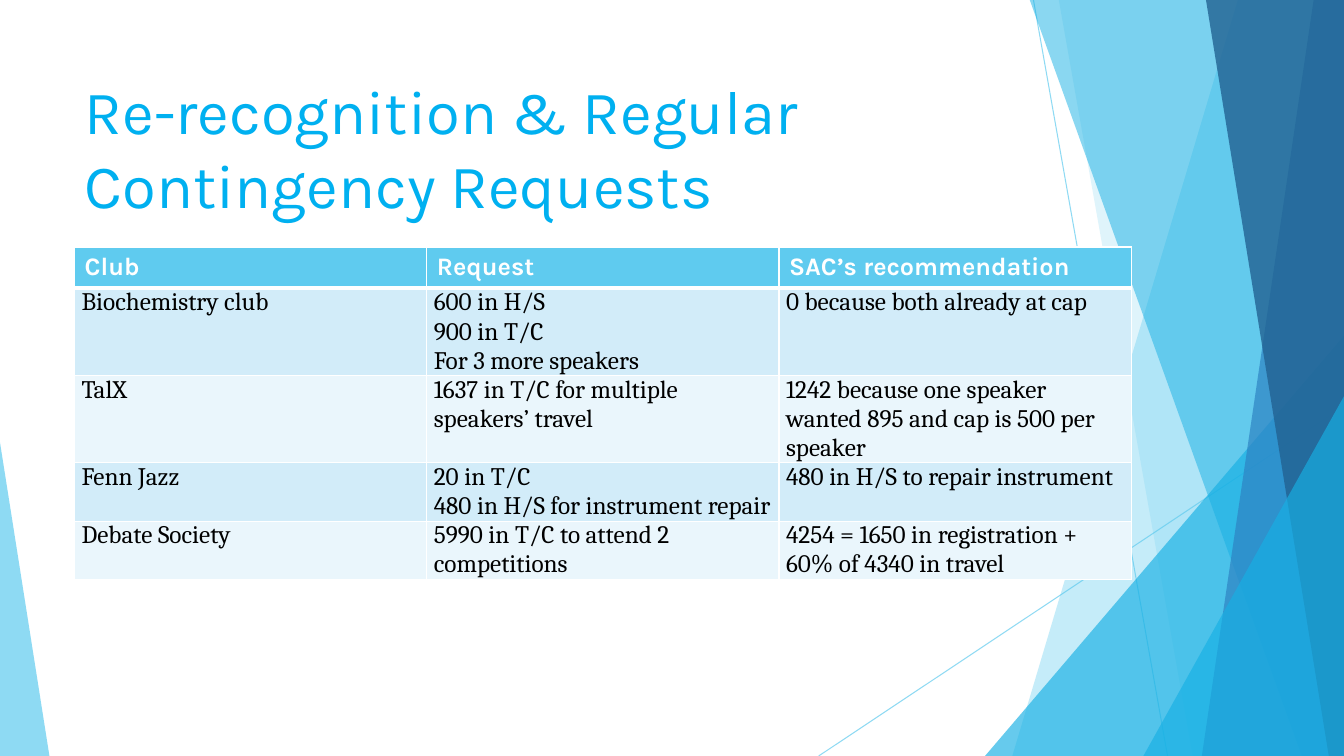
from lxml.etree import SubElement
from pptx import Presentation
from pptx.dml.color import RGBColor
from pptx.enum.shapes import MSO_CONNECTOR, MSO_SHAPE
from pptx.enum.text import MSO_ANCHOR, MSO_AUTO_SIZE, PP_ALIGN
from pptx.oxml.ns import qn
from pptx.oxml.xmlchemy import OxmlElement
from pptx.util import Inches, Pt

WIDTH, HEIGHT = 13.33, 7.5
COLORS = {
    "sky": "5FCBEF", "cyan": "17B0E4", "blue": "2E83C3", "navy": "226292",
    "title": "00B0F0", "white": "FFFFFF", "black": "000000",
    "band_dark": "D2ECF9", "band_light": "EAF6FC",
}
HEADINGS = ["Club", "Request", "SAC’s recommendation"]
REQUESTS = [
    ["Biochemistry club", "600 in H/S\n900 in T/C\nFor 3 more speakers",
     "0 because both already at cap"],
    ["TalX", "1637 in T/C for multiple speakers’ travel",
     "1242 because one speaker wanted 895 and cap is 500 per speaker"],
    ["Fenn Jazz", "20 in T/C\n480 in H/S for instrument repair",
     "480 in H/S to repair instrument"],
    ["Debate Society", "5990 in T/C to attend 2 competitions",
     "4254 = 1650 in registration + 60% of 4340 in travel"],
]


def color(name):
    return RGBColor.from_string(COLORS[name])


def set_opacity(shape, percent):
    for tint in shape.element.spPr.iter(qn("a:srgbClr")):
        SubElement(tint, qn("a:alpha"), val=str(percent * 1000))


def paint(shape, fill, opacity):
    shape.shadow.inherit = False
    shape.line.fill.background()
    shape.fill.solid()
    shape.fill.fore_color.rgb = color(fill)
    set_opacity(shape, opacity)


def write(frame, text, font, size, fill, bold=False):
    """Write each line of the text as a paragraph."""
    frame.word_wrap = True
    for index, line in enumerate(text.split("\n")):
        para = frame.paragraphs[0] if index == 0 else frame.add_paragraph()
        para.alignment = PP_ALIGN.LEFT
        para.line_spacing = 1.0
        span = para.add_run()
        span.text = line
        span.font.name = font
        span.font.size = Pt(size)
        span.font.bold = bold
        span.font.color.rgb = color(fill)


# Background facets
def add_ray(page, start, end):
    ray = page.shapes.add_connector(
        MSO_CONNECTOR.STRAIGHT, *(Inches(value) for value in start + end))
    ray.line.width = Pt(0.75)
    ray.line.color.rgb = color("sky")
    set_opacity(ray, 70)
    SubElement(ray.element.spPr, qn("a:effectLst"))


def add_shard(page, top_x, bottom_x, fill, opacity):
    """Fill from a slanted left edge to the right side of the slide."""
    top = -0.01
    corners = [(WIDTH, top), (WIDTH, HEIGHT), (bottom_x, HEIGHT)]
    outline = page.shapes.build_freeform(Inches(top_x), Inches(top))
    outline.add_line_segments([(Inches(x), Inches(y)) for x, y in corners])
    paint(outline.convert_to_shape(), fill, opacity)


def add_corner(page, left, top, width, apex, fill, opacity):
    """Stand a right triangle on the bottom of the slide."""
    corner = page.shapes.add_shape(
        MSO_SHAPE.ISOSCELES_TRIANGLE, Inches(left), Inches(top),
        Inches(width), Inches(HEIGHT - top))
    corner.adjustments[0] = apex
    paint(corner, fill, opacity)


def add_facets(page):
    add_ray(page, (10.25, 0), (11.58, HEIGHT))
    add_ray(page, (WIDTH, 4.03), (8.12, HEIGHT))
    add_shard(page, 12.28, 10.04, "sky", 36)
    add_shard(page, 10.5, 11.83, "sky", 20)
    add_corner(page, 9.77, 3.33, 3.56, 1, "cyan", 66)
    add_shard(page, 10.21, 12.91, "cyan", 50)
    add_shard(page, 13.03, 11.92, "blue", 70)
    add_shard(page, 11.96, 13.18, "navy", 80)
    add_corner(page, 11.34, 3.93, 1.99, 1, "cyan", 66)
    add_corner(page, 0, 4.39, 0.49, 0, "sky", 70)


# Title
def add_title(page, left, top, width, height):
    title = page.shapes.title
    title.left, title.top = Inches(left), Inches(top)
    title.width, title.height = Inches(width), Inches(height)
    title.text_frame.auto_size = MSO_AUTO_SIZE.NONE
    title.text_frame.vertical_anchor = MSO_ANCHOR.TOP
    write(title.text_frame, "Re-recognition & Regular Contingency Requests",
          font="Karla", size=44, fill="title")
    # Bring the title in front of the facets
    title.element.getparent().append(title.element)


# Table of requests
def set_borders(cell, **widths):
    properties = cell._tc.get_or_add_tcPr()
    for index, side in enumerate("LRTB"):
        edge = OxmlElement(f"a:ln{side}")
        edge.set("w", str(Pt(widths.get(side, 1))))
        fill = SubElement(edge, qn("a:solidFill"))
        SubElement(fill, qn("a:srgbClr"), val=COLORS["white"])
        properties.insert(index, edge)


def fill_cell(cell, text, row):
    cell.fill.solid()
    if row == 0:
        cell.fill.fore_color.rgb = color("sky")
        write(cell.text_frame, text, font="Karla", size=18, fill="white",
              bold=True)
        set_borders(cell, B=3)
        return
    cell.fill.fore_color.rgb = color("band_dark" if row % 2 else "band_light")
    cell.margin_left = cell.margin_right = Inches(0.07)
    cell.margin_top = cell.margin_bottom = 0
    write(cell.text_frame, text, font="Cambria", size=18, fill="black")
    set_borders(cell, T=3 if row == 1 else 1)


def add_requests(page, left, top, width, row_height):
    rows = [HEADINGS] + REQUESTS
    table = page.shapes.add_table(
        len(rows), len(HEADINGS), Inches(left), Inches(top),
        Inches(width), Inches(row_height * len(rows))).table
    for row, texts in enumerate(rows):
        for column, text in enumerate(texts):
            fill_cell(table.cell(row, column), text, row)


def main():
    deck = Presentation()
    deck.slide_width, deck.slide_height = Inches(WIDTH), Inches(HEIGHT)
    page = deck.slides.add_slide(deck.slide_layouts[5])
    add_facets(page)
    add_title(page, 0.74, 0.67, 10.26, 1.44)
    add_requests(page, 0.74, 2.45, 10.48, 0.41)
    deck.save("out.pptx")


if __name__ == "__main__":
    main()
